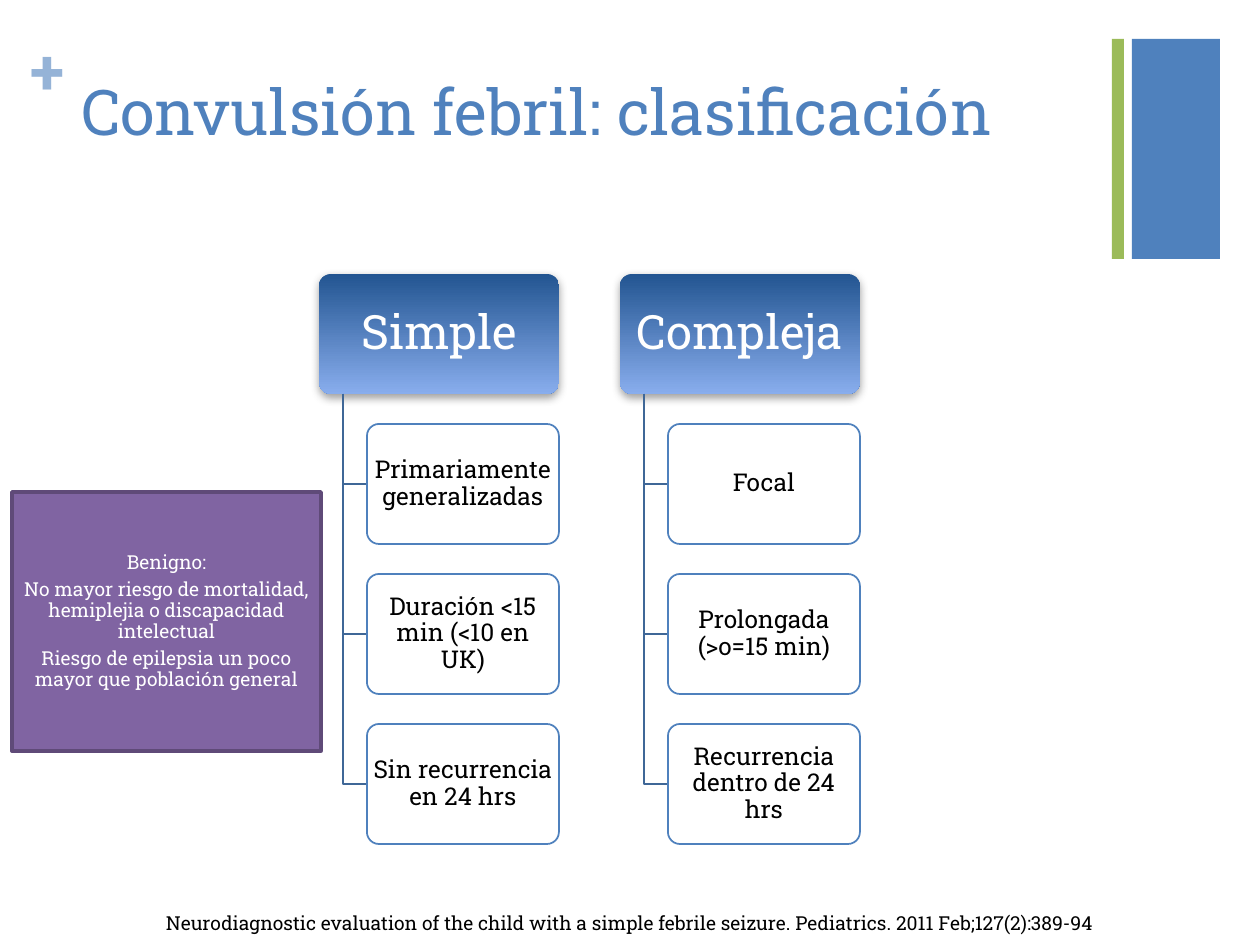
from lxml.etree import SubElement
from pptx import Presentation
from pptx.dml.color import RGBColor
from pptx.enum.shapes import MSO_SHAPE
from pptx.enum.text import MSO_ANCHOR, PP_ALIGN
from pptx.oxml.ns import qn
from pptx.util import Pt

FONT = "Roboto Slab"
EMU_PER_PX = 914400 / 126

TITLE = "Convulsión febril: clasificación"
CLASSES = [
    ("Simple", [
        "Primariamente generalizadas",
        "Duración <15 min (<10 en UK)",
        "Sin recurrencia en 24 hrs",
    ]),
    ("Compleja", [
        "Focal",
        "Prolongada (>o=15 min)",
        "Recurrencia dentro de 24 hrs",
    ]),
]
PROGNOSIS = [
    "Benigno:",
    "No mayor riesgo de mortalidad, hemiplejia o discapacidad intelectual",
    "Riesgo de epilepsia un poco mayor que población general",
]
CITATION = ("Neurodiagnostic evaluation of the child with a simple febrile seizure. "
            "Pediatrics. 2011 Feb;127(2):389-94")
BANDS = [((1132, 39, 88, 220), "4F81BD"), ((1112, 39, 12, 220), "9BBB59")]

TREE_LEFT, TREE_TOP = 319, 274
COLUMN_PITCH, ROW_PITCH = 301, 150
HEAD_WIDTH, BOX_HEIGHT = 240, 120
STEM_INDENT, FEATURE_INDENT = 24, 48


def px(length):
    return round(length * EMU_PER_PX)


def rgb(colour):
    return RGBColor.from_string(colour)


def write(shape, paragraphs, size, colour, inset=(12, 6), align=PP_ALIGN.LEFT,
          anchor=MSO_ANCHOR.TOP, bold=False, tight=False):
    frame = shape.text_frame
    frame.word_wrap = True
    frame.vertical_anchor = anchor
    frame.margin_left = frame.margin_right = px(inset[0])
    frame.margin_top = frame.margin_bottom = px(inset[1])
    for index, text in enumerate(paragraphs):
        paragraph = frame.add_paragraph() if index else frame.paragraphs[0]
        paragraph.alignment = align
        if tight:
            paragraph.line_spacing = 0.9
            after = SubElement(paragraph._p.get_or_add_pPr(), qn("a:spcAft"))
            SubElement(after, qn("a:spcPct"), val="35000")
        run = paragraph.add_run()
        run.text = text
        run.font.name = FONT
        run.font.size = Pt(size)
        run.font.bold = bold
        run.font.color.rgb = rgb(colour)


def add_label(slide, box, text, size, colour, **style):
    write(slide.shapes.add_textbox(*map(px, box)), [text], size, colour, **style)


def add_box(slide, kind, box, fill=None, line=None, weight=1):
    shape = slide.shapes.add_shape(kind, *map(px, box))
    shape.shadow.inherit = False
    if fill:
        shape.fill.solid()
        shape.fill.fore_color.rgb = rgb(fill)
    if line:
        shape.line.color.rgb = rgb(line)
        shape.line.width = Pt(weight)
    else:
        shape.line.fill.background()
    return shape


def write_centred(shape, paragraphs, size, colour, inset):
    write(shape, paragraphs, size, colour, inset, PP_ALIGN.CENTER,
          MSO_ANCHOR.MIDDLE, tight=True)


def add_head(slide, left, name):
    head = add_box(slide, MSO_SHAPE.ROUNDED_RECTANGLE,
                   (left, TREE_TOP, HEAD_WIDTH, BOX_HEIGHT))
    head.adjustments[0] = 0.1
    head.fill.gradient()
    head.fill.gradient_angle = 270
    for stop, colour in zip(head.fill.gradient_stops, ("235591", "88ADED")):
        stop.color.rgb = rgb(colour)
    effects = head._element.spPr.find(qn("a:effectLst"))
    shadow = SubElement(effects, qn("a:outerShdw"), blurRad=str(Pt(5)),
                        dist=str(Pt(2)), dir="5400000", rotWithShape="0")
    shade = SubElement(shadow, qn("a:srgbClr"), val="808080")
    SubElement(shade, qn("a:alpha"), val="75000")
    write_centred(head, [name], 27, "FFFFFF", (7, 5))


def add_feature(slide, left, top, text):
    stem, edge = left + STEM_INDENT, left + FEATURE_INDENT
    start, middle = TREE_TOP + BOX_HEIGHT, top + BOX_HEIGHT // 2
    builder = slide.shapes.build_freeform(px(stem), px(start))
    builder.add_line_segments(
        [(px(stem), px(middle)), (px(edge), px(middle))], close=False)
    elbow = builder.convert_to_shape()
    elbow.shadow.inherit = False
    elbow.fill.background()
    elbow.line.color.rgb = rgb("3F6797")
    elbow.line.width = Pt(1)

    feature = add_box(slide, MSO_SHAPE.ROUNDED_RECTANGLE,
                      (edge, top, HEAD_WIDTH - FEATURE_INDENT, BOX_HEIGHT),
                      "FFFFFF", "4F81BD")
    feature.adjustments[0] = 0.1
    white = feature._element.spPr.find(qn("a:solidFill"))[0]
    SubElement(white, qn("a:alpha"), val="90000")
    write_centred(feature, [text], 14, "000000", (2, 2))


def main():
    deck = Presentation()
    deck.slide_width, deck.slide_height = px(1260), px(945)
    slide = deck.slides.add_slide(deck.slide_layouts[6])

    for box, colour in BANDS:
        add_box(slide, MSO_SHAPE.RECTANGLE, box, colour)
    add_label(slide, (31, 32, 37, 77), "+", 36, "95B3D7", inset=(0, 0), bold=True)
    add_label(slide, (69, 67, 1041, 154), TITLE, 36, "4F81BD")

    for column, (name, features) in enumerate(CLASSES):
        left = TREE_LEFT + column * COLUMN_PITCH
        add_head(slide, left, name)
        for row, text in enumerate(features, start=1):
            add_feature(slide, left, TREE_TOP + row * ROW_PITCH, text)

    prognosis = add_box(slide, MSO_SHAPE.RECTANGLE, (12, 492, 309, 259),
                        "8064A2", "5F4A78", 2)
    write_centred(prognosis, PROGNOSIS, 11, "FFFFFF", (5, 5))
    add_label(slide, (0, 905, 1260, 37), CITATION, 11, "000000",
              align=PP_ALIGN.CENTER)
    deck.save("out.pptx")


if __name__ == "__main__":
    main()
